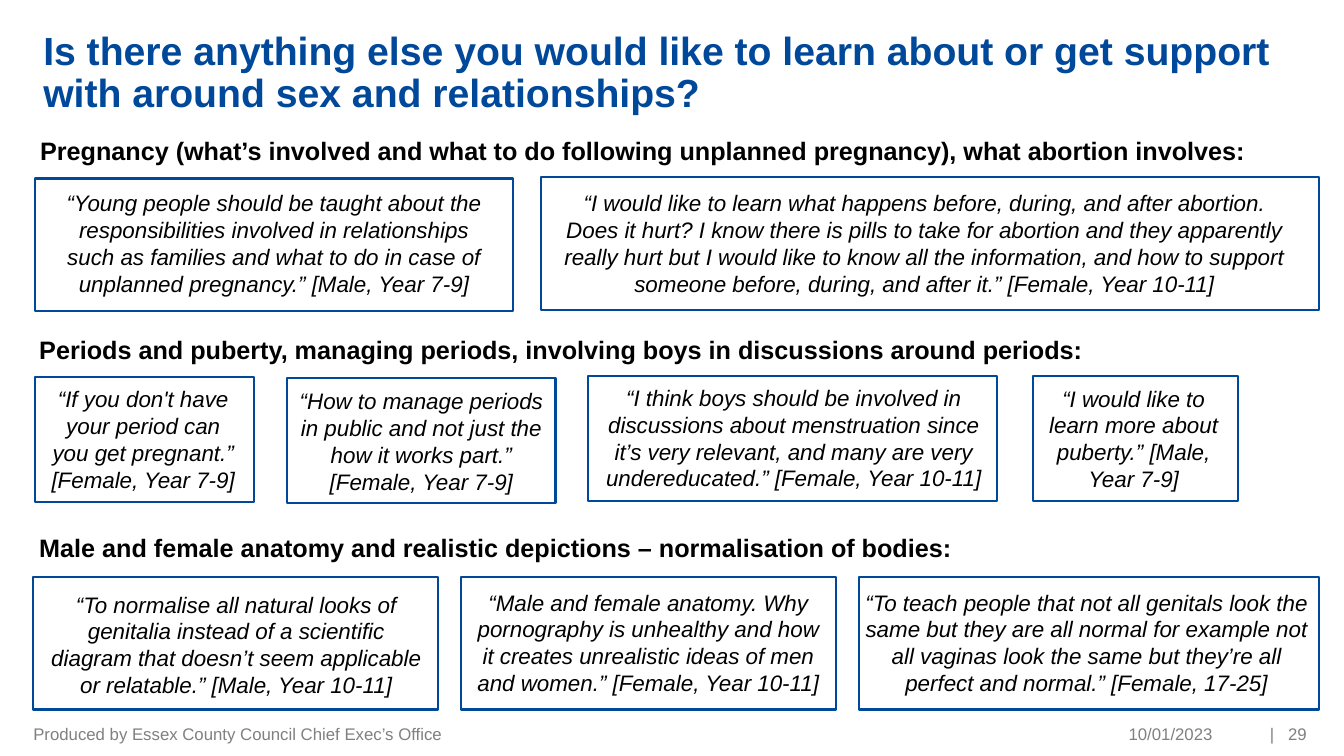
from lxml import etree
from pptx import Presentation
from pptx.dml.color import RGBColor
from pptx.enum.shapes import MSO_SHAPE as Shape
from pptx.enum.text import MSO_ANCHOR as Anchor, PP_ALIGN as Align
from pptx.oxml.ns import qn
from pptx.util import Cm, Pt

BLUE = RGBColor(0x00, 0x48, 0x99)
BLACK = RGBColor(0x00, 0x00, 0x00)
GREY = RGBColor(0x80, 0x80, 0x80)

TITLE_FONT = {"name": "Arial", "size": Pt(28), "bold": True}
HEADING_FONT = {"name": "Arial", "size": Pt(18), "bold": True}
QUOTE_FONT = {"name": "Arial", "size": Pt(16), "italic": True}
FOOTER_FONT = {"name": "Arial", "size": Pt(12)}
QUOTE_TEXT_HEIGHT = 3

# Each section: heading box, heading, then quotes as
# (frame box, text offset from frame, text width, text), in cm
SECTIONS = [
    ((0.76, 3.28, 32.08, 1.17),
     "Pregnancy (what’s involved and what to do following unplanned pregnancy), "
     "what abortion involves:",
     [((0.89, 4.5, 12.04, 3.33), (0.25, 0.15), 11.53,
       "“Young people should be taught about the responsibilities involved in "
       "relationships such as families and what to do in case of unplanned "
       "pregnancy.” [Male, Year 7-9]"),
      ((13.64, 4.47, 19.61, 3.35), (0.25, 0.18), 18.82,
       "“I would like to learn what happens before, during, and after abortion. "
       "Does it hurt? I know there is pills to take for abortion and they "
       "apparently really hurt but I would like to know all the information, and "
       "how to support someone before, during, and after it.” [Female, Year 10-11]")]),
    ((0.74, 8.31, 28.35, 1.02),
     "Periods and puberty, managing periods, involving boys in discussions "
     "around periods:",
     [((0.89, 9.5, 5.51, 3.15), (0, 0.08), 5.44,
       "“If you don't have your period can you get pregnant.” [Female, Year 7-9]"),
      ((7.24, 9.53, 6.76, 3.15), (0, 0.1), 6.76,
       "“How to manage periods in public and not just the how it works part.” "
       "[Female, Year 7-9]"),
      ((14.81, 9.47, 10.31, 3.15), (0, 0.08), 10.39,
       "“I think boys should be involved in discussions about menstruation since "
       "it’s very relevant, and many are very undereducated.” "
       "[Female, Year 10-11]"),
      ((26.04, 9.47, 5.16, 3.15), (-0.05, 0.1), 5.16,
       "“I would like to learn more about puberty.” [Male, Year 7-9]")]),
    ((0.74, 13.28, 24.16, 1.02),
     "Male and female anatomy and realistic depictions – normalisation of bodies:",
     [((0.84, 14.53, 10.19, 3.35), (0.15, 0.23), 9.93,
       "“To normalise all natural looks of genitalia instead of a scientific "
       "diagram that doesn’t seem applicable or relatable.” [Male, Year 10-11]"),
      ((11.61, 14.53, 9.47, 3.35), (0.12, 0.18), 9.22,
       "“Male and female anatomy. Why pornography is unhealthy and how it creates "
       "unrealistic ideas of men and women.” [Female, Year 10-11]"),
      ((21.64, 14.53, 11.61, 3.35), (-0.2, 0.18), 11.89,
       "“To teach people that not all genitals look the same but they are all "
       "normal for example not all vaginas look the same but they’re all perfect "
       "and normal.” [Female, 17-25]")]),
]


def apply_format(target, values):
    for name, value in values.items():
        setattr(target, name, value)


def write_text(shape, text, font, color, align=Align.LEFT, **frame_values):
    frame = shape.text_frame
    apply_format(frame, {"word_wrap": True, **frame_values})
    paragraph = frame.paragraphs[0]
    paragraph.alignment = align
    run = paragraph.add_run()
    run.text = text
    apply_format(run.font, font)
    run.font.color.rgb = color
    return paragraph


def add_text(slide, box, *args, **values):
    shape = slide.shapes.add_textbox(*map(Cm, box))
    return write_text(shape, *args, **values)


def add_title(slide, box, text):
    title = slide.shapes.title
    apply_format(title, dict(zip(("left", "top", "width", "height"), map(Cm, box))))
    paragraph = write_text(title, text, TITLE_FONT, BLUE,
                           vertical_anchor=Anchor.BOTTOM, margin_left=Cm(0.25),
                           margin_right=Cm(0.25), margin_top=Cm(0.13), margin_bottom=0)
    paragraph.line_spacing = 0.9


def add_quote(slide, box, offset, text_width, text):
    frame = slide.shapes.add_shape(Shape.RECTANGLE, *map(Cm, box))
    frame.shadow.inherit = False
    frame.fill.background()
    frame.line.color.rgb = BLUE
    frame.line.width = Pt(1.5)
    text_box = (box[0] + offset[0], box[1] + offset[1], text_width, QUOTE_TEXT_HEIGHT)
    add_text(slide, text_box, text, QUOTE_FONT, BLACK, Align.CENTER)


def add_section(slide, box, heading, quotes):
    add_text(slide, box, heading, HEADING_FONT, BLACK)
    for quote in quotes:
        add_quote(slide, *quote)


def add_footer(slide, box):
    left, top, width, height = box
    style = {"font": FOOTER_FONT, "color": GREY, "vertical_anchor": Anchor.MIDDLE}
    add_text(slide, (left, top, 16, height),
             "Produced by Essex County Council Chief Exec’s Office",
             margin_left=0, **style)
    add_text(slide, (left + 23.62, top, 6.1, height), "10/01/2023",
             align=Align.RIGHT, margin_right=0, **style)
    # Page number, set off from its bar by a tab stop
    number_width = 2.16
    number = add_text(slide, (left + width - number_width, top, number_width, height),
                      "|\t29", margin_left=Cm(1.22), margin_right=0, **style)
    tabs = etree.SubElement(number._p.get_or_add_pPr(), qn("a:tabLst"))
    etree.SubElement(tabs, qn("a:tab"), pos=str(Cm(0.46)), algn="l")


def main():
    presentation = Presentation()
    presentation.slide_width = Cm(33.87)
    presentation.slide_height = Cm(19.05)
    slide = presentation.slides.add_slide(presentation.slide_layouts[5])
    add_title(slide, (0.84, 0.64, 32.08, 2.29),
              "Is there anything else you would like to learn about or get support "
              "with around sex and relationships?")
    for section in SECTIONS:
        add_section(slide, *section)
    add_footer(slide, (0.84, 18.31, 32.1, 0.38))
    presentation.save("out.pptx")


if __name__ == "__main__":
    main()
